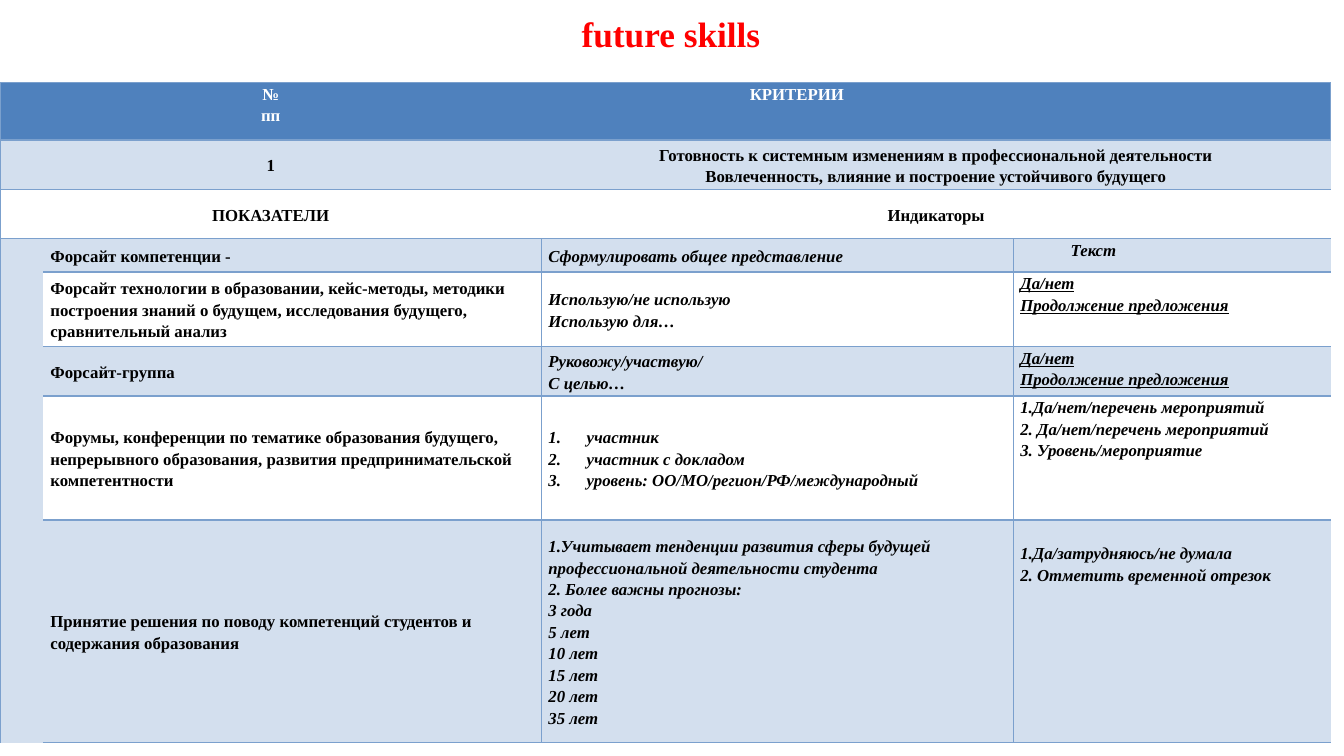
"""Builds the future skills slide: a title over a table of criteria and indicators."""
from dataclasses import dataclass

from lxml.etree import SubElement
from pptx import Presentation
from pptx.dml.color import RGBColor
from pptx.enum.text import MSO_ANCHOR, PP_ALIGN
from pptx.oxml.ns import qn
from pptx.util import Inches, Pt


@dataclass(frozen=True)
class Theme:
    font: str = "Times New Roman"
    title_size: float = 25.2
    body_size: float = 12
    title: str = "FF0000"
    header: str = "4F81BD"
    header_text: str = "FFFFFF"
    text: str = "000000"
    band: str = "D3DFEE"
    border: str = "7BA0CD"


THEME = Theme()
COLUMNS = [0.43, 4.94, 4.68, 0.39, 2.76]
ROWS = [0.57, 0.49, 0.49, 0.33, 0.74, 0.49, 1.23, 2.21]
FIRST_BODY_ROW = 3

HEADINGS = [
    ("№\nпп", "КРИТЕРИИ"),
    ("1", "Готовность к системным изменениям в профессиональной деятельности\n"
          "Вовлеченность, влияние и построение устойчивого будущего"),
    ("ПОКАЗАТЕЛИ", "Индикаторы"),
]
INDICATORS = [
    ("Форсайт компетенции -", "Сформулировать общее представление", "Текст"),
    ("Форсайт технологии в образовании, кейс-методы, методики построения знаний о будущем, "
     "исследования будущего, сравнительный анализ",
     "Использую/не использую\nИспользую для…",
     "Да/нет\nПродолжение предложения"),
    ("Форсайт-группа",
     "Руковожу/участвую/\nС целью…",
     "Да/нет\nПродолжение предложения"),
    ("Форумы, конференции по тематике образования будущего, непрерывного образования, "
     "развития предпринимательской компетентности",
     "участник\nучастник с докладом\nуровень: ОО/МО/регион/РФ/международный",
     "1.Да/нет/перечень мероприятий\n2. Да/нет/перечень мероприятий\n3. Уровень/мероприятие"),
    ("Принятие решения по поводу компетенций студентов и содержания образования",
     "1.Учитывает тенденции развития сферы будущей профессиональной деятельности студента\n"
     "2. Более важны прогнозы:\n3 года\n5 лет\n10 лет\n15 лет\n20 лет\n35 лет",
     "1.Да/затрудняюсь/не думала\n2. Отметить временной отрезок"),
]


def write(frame, text, size, color, align, spacing, italic=False, underline=False):
    """Fill a text frame with bold text in one style."""
    frame.text = text
    for para in frame.paragraphs:
        para.alignment = align
        para.line_spacing = spacing
        for span in para.runs:
            font = span.font
            font.name, font.size, font.bold = THEME.font, Pt(size), True
            font.italic, font.underline = italic, underline
            font.color.rgb = RGBColor.from_string(color)


def indent(cell, left, numbered=False):
    """Indent the paragraphs of a cell, with hanging numbers if asked."""
    for para in cell.text_frame.paragraphs:
        properties = para._p.get_or_add_pPr()
        properties.set("marL", str(Inches(left)))
        if numbered:
            properties.set("indent", str(-Inches(left)))
            SubElement(properties, qn("a:buAutoNum"), type="arabicPeriod")


def add_title(page, text):
    """Add the centred slide title."""
    box = page.shapes.add_textbox(Inches(0.89), Inches(0.11), Inches(11.53), Inches(0.49))
    frame = box.text_frame
    frame.word_wrap = True
    frame.vertical_anchor = MSO_ANCHOR.MIDDLE
    write(frame, text, THEME.title_size, THEME.title, PP_ALIGN.CENTER, 0.9)


def visible_edges(row, column):
    """Return the edges of a grid cell that carry a line."""
    body = row >= FIRST_BODY_ROW
    side = body and column == 0
    return {
        "L": column == 0 or (body and column in (2, 3)),
        "R": column == len(COLUMNS) - 1 or (body and column in (1, 2)),
        "T": not side or row == FIRST_BODY_ROW,
        "B": not side or row == len(ROWS) - 1,
    }


def set_borders(cell, edges):
    """Draw the chosen edges of a cell and clear the rest."""
    properties = cell._tc.get_or_add_tcPr()
    for edge, visible in edges.items():
        line = SubElement(properties, qn(f"a:ln{edge}"), w=str(Pt(1)))
        if visible:
            fill = SubElement(line, qn("a:solidFill"))
            SubElement(fill, qn("a:srgbClr"), val=THEME.border)
        else:
            SubElement(line, qn("a:noFill"))


def style_cell(cell, row, column):
    """Set the margins, borders and banded fill of a cell."""
    cell.margin_left = cell.margin_right = Inches(0.07)
    cell.margin_top = cell.margin_bottom = 0
    set_borders(cell, visible_edges(row, column))
    if row == 0:
        cell.fill.solid()
        cell.fill.fore_color.rgb = RGBColor.from_string(THEME.header)
    elif row % 2 or (row >= FIRST_BODY_ROW and column == 0):
        cell.fill.solid()
        cell.fill.fore_color.rgb = RGBColor.from_string(THEME.band)
    else:
        cell.fill.background()


def add_grid(page):
    """Add the empty styled table."""
    frame = page.shapes.add_table(len(ROWS), len(COLUMNS), 0, Inches(0.82),
                                  Inches(sum(COLUMNS)), Inches(sum(ROWS)))
    table = frame.table
    table.first_row = table.horz_banding = False
    for column, width in zip(table.columns, COLUMNS):
        column.width = Inches(width)
    for row, height in zip(table.rows, ROWS):
        row.height = Inches(height)
    for row in range(len(ROWS)):
        for column in range(len(COLUMNS)):
            style_cell(table.cell(row, column), row, column)
    return table


def fill_headings(table):
    """Merge and fill the three heading rows."""
    for row, texts in enumerate(HEADINGS):
        last = 3 if row == 0 else 4
        color = THEME.header_text if row == 0 else THEME.text
        for text, (start, end) in zip(texts, ((0, 1), (2, last))):
            cell = table.cell(row, start)
            cell.merge(table.cell(row, end))
            cell.vertical_anchor = MSO_ANCHOR.TOP if row == 0 else MSO_ANCHOR.MIDDLE
            write(cell.text_frame, text, THEME.body_size, color, PP_ALIGN.CENTER, 1.15)


def fill_indicators(table):
    """Merge and fill the indicator rows."""
    table.cell(FIRST_BODY_ROW, 0).merge(table.cell(len(ROWS) - 1, 0))
    for row, texts in enumerate(INDICATORS, FIRST_BODY_ROW):
        table.cell(row, 3).merge(table.cell(row, 4))
        for column, text in enumerate(texts, 1):
            cell = table.cell(row, column)
            cell.vertical_anchor = MSO_ANCHOR.TOP if column == 3 else MSO_ANCHOR.MIDDLE
            write(cell.text_frame, text, THEME.body_size, THEME.text, PP_ALIGN.LEFT, 1.15,
                  italic=column > 1, underline=column == 3 and row in (4, 5))
    indent(table.cell(3, 3), 0.5)
    indent(table.cell(6, 2), 0.38, numbered=True)
    table.cell(7, 3).margin_top = Inches(0.22)


def main():
    """Build and save the deck."""
    deck = Presentation()
    deck.slide_width, deck.slide_height = Inches(13.33), Inches(7.5)
    page = deck.slides.add_slide(deck.slide_layouts[6])
    add_title(page, "future skills")
    table = add_grid(page)
    fill_headings(table)
    fill_indicators(table)
    deck.save("out.pptx")


if __name__ == "__main__":
    main()
